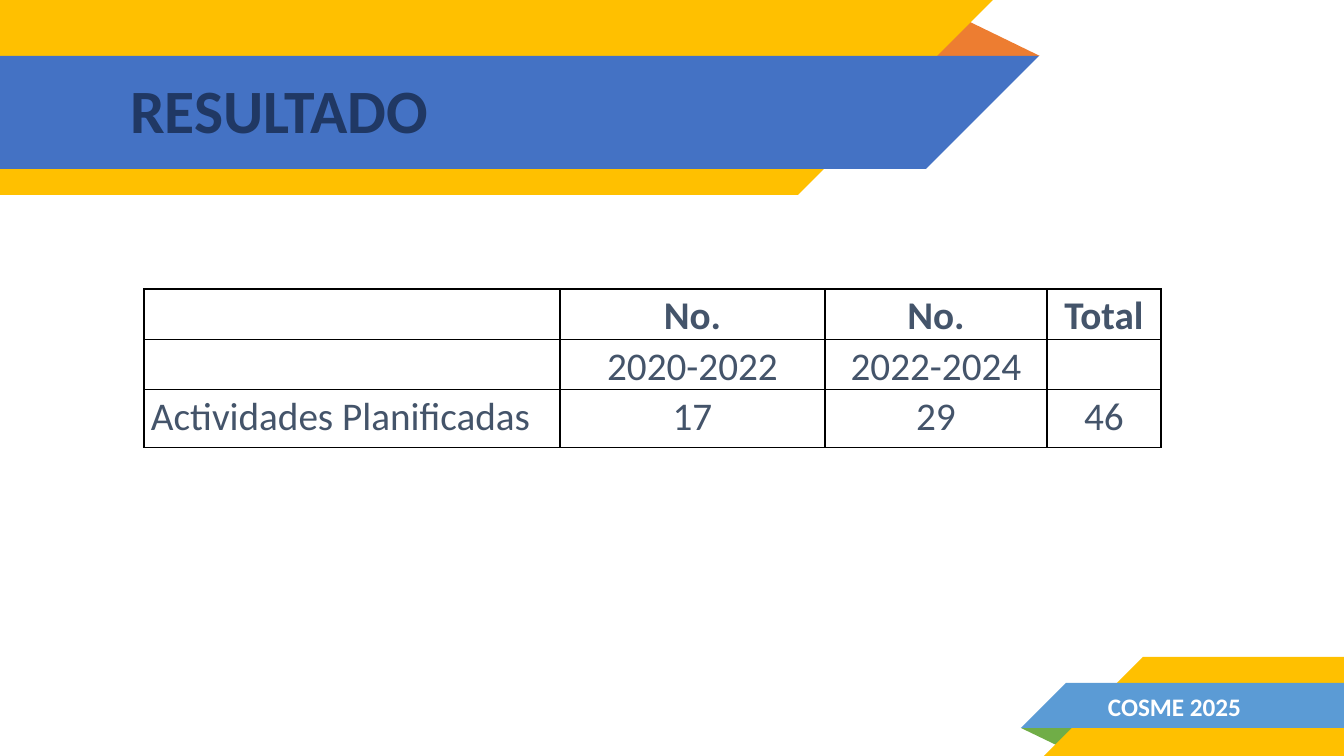
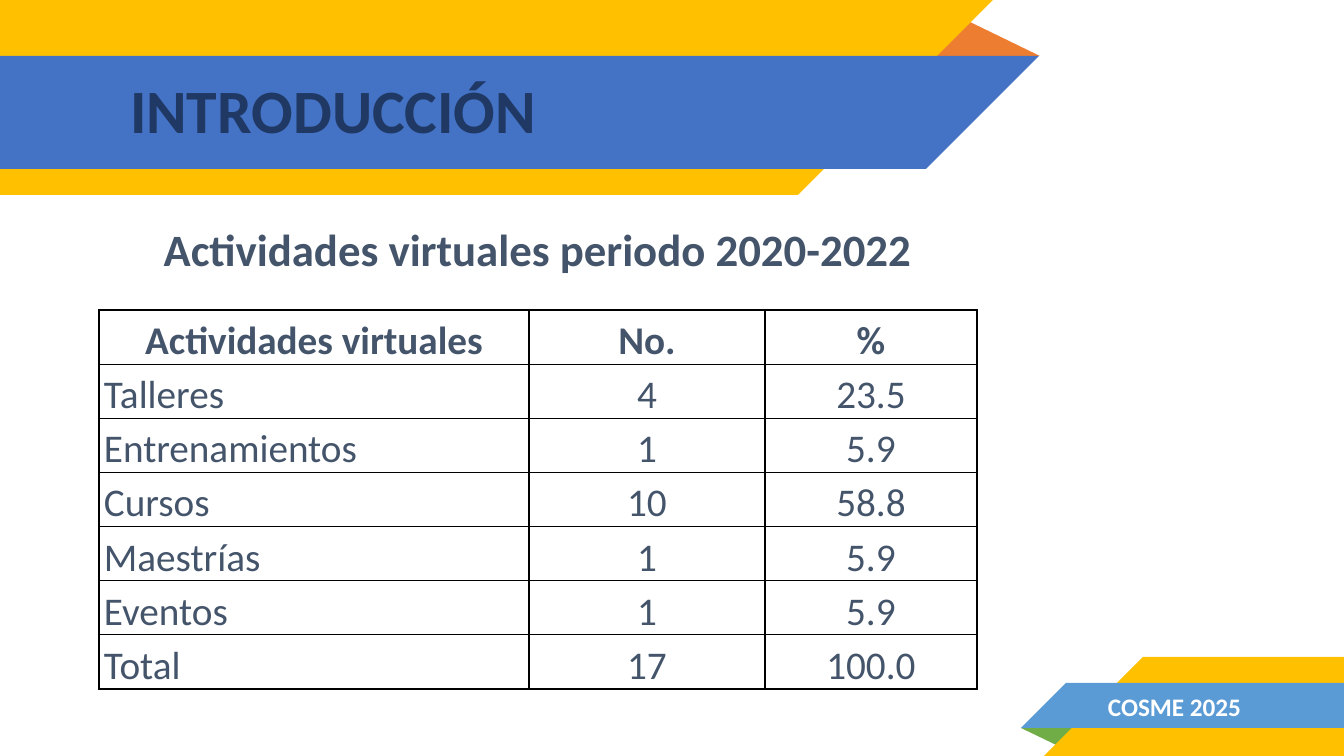
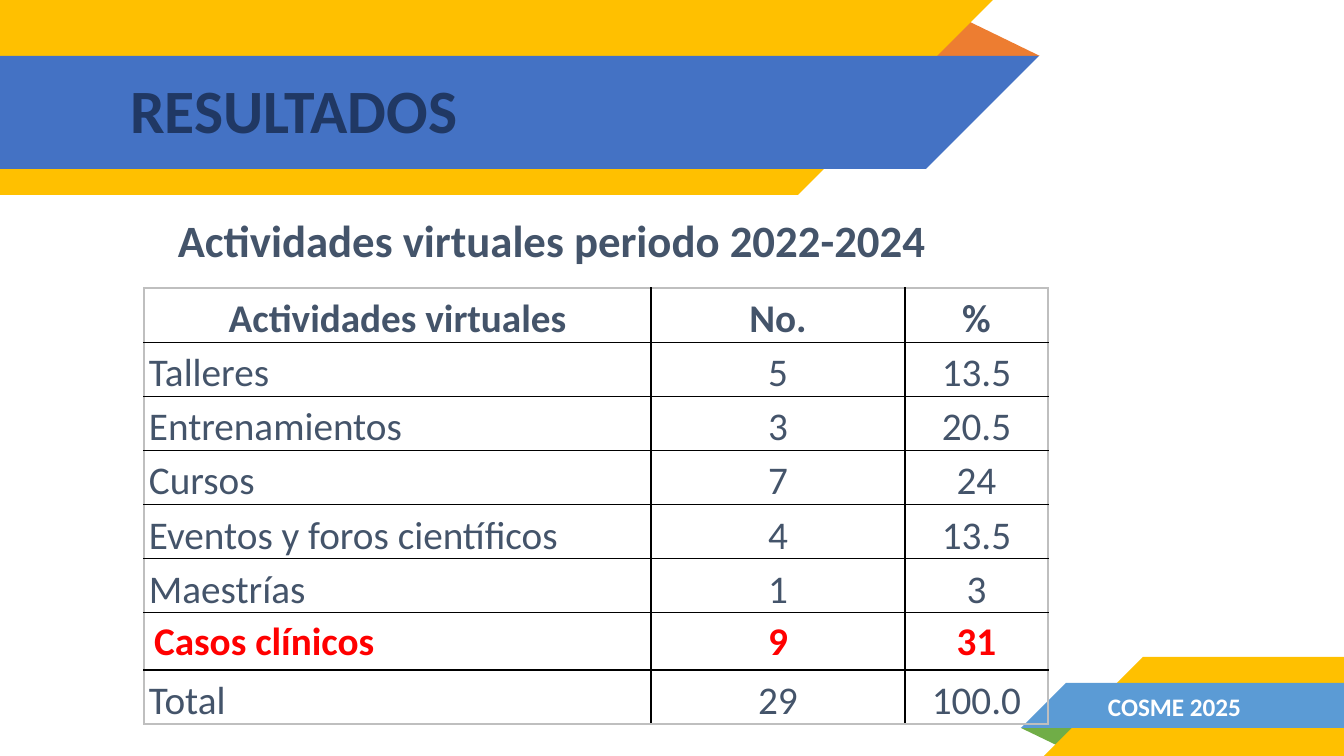
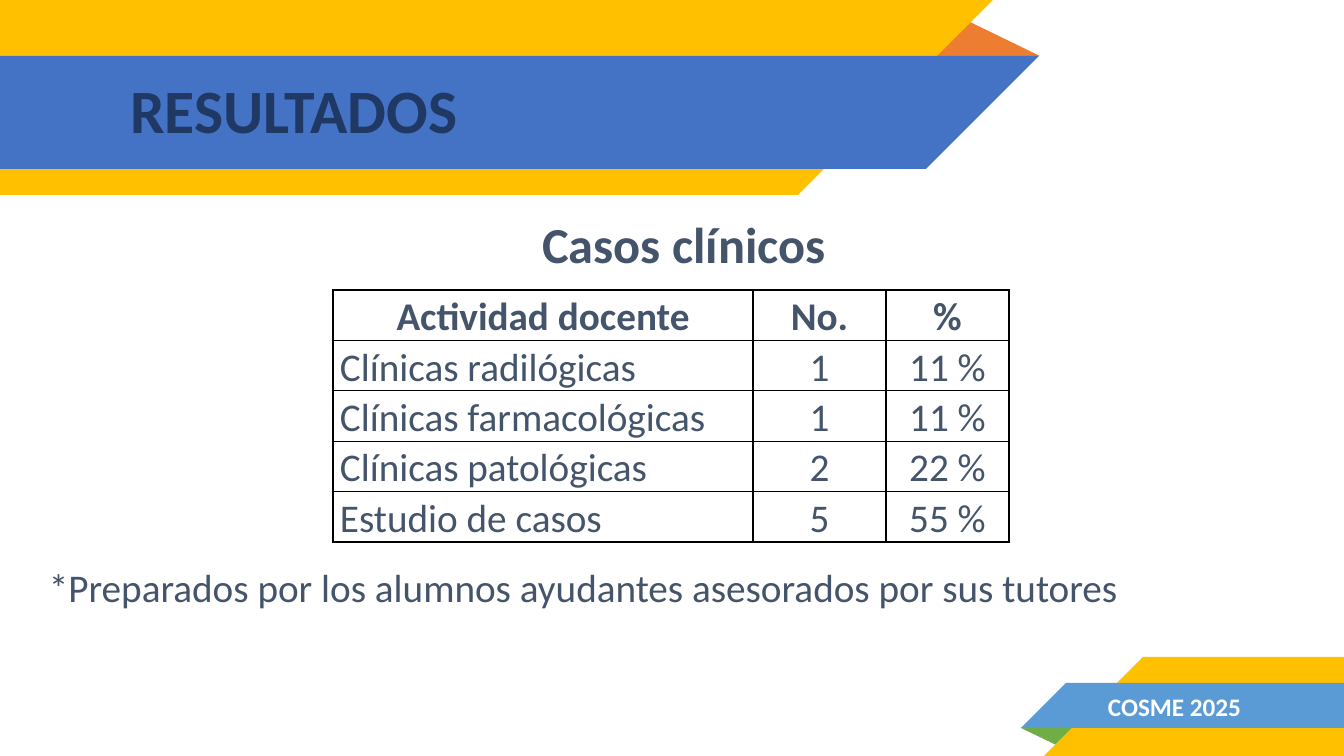
from lxml.etree import SubElement
from pptx import Presentation
from pptx.dml.color import RGBColor
from pptx.enum.shapes import MSO_SHAPE
from pptx.enum.text import MSO_ANCHOR, PP_ALIGN
from pptx.oxml.ns import qn
from pptx.util import Pt

PX = 914400 / 100.8
FONT = "Calibri"
COLORS = {
    "yellow": "FFC000", "blue": "4472C4", "sky": "5B9BD5", "orange": "ED7D31",
    "green": "70AD47", "title": "203864", "text": "44546A", "white": "FFFFFF",
    "highlight": "FF0000", "border": "000000", "faint": "BFBFBF",
}
LEFT, CENTER = PP_ALIGN.LEFT, PP_ALIGN.CENTER

# kind, left, top, width, height, rotation, colour; from back to front
BANDS = [
    (MSO_SHAPE.ISOSCELES_TRIANGLE, 925, 18, 115, 38, 0, "orange"),
    (MSO_SHAPE.RECTANGLE, 0, 0, 798, 195, 0, "yellow"),
    (MSO_SHAPE.RIGHT_TRIANGLE, 798, 0, 195, 195, 90, "yellow"),
    (MSO_SHAPE.RECTANGLE, 0, 56, 926, 113, 0, "blue"),
    (MSO_SHAPE.RIGHT_TRIANGLE, 926, 56, 113, 113, 90, "blue"),
    (MSO_SHAPE.ISOSCELES_TRIANGLE, 1021, 728, 58, 19, 180, "green"),
    (MSO_SHAPE.RECTANGLE, 1143, 657, 201, 99, 0, "yellow"),
    (MSO_SHAPE.RIGHT_TRIANGLE, 1044, 657, 99, 99, 270, "yellow"),
    (MSO_SHAPE.RECTANGLE, 1066, 683, 278, 45, 0, "sky"),
    (MSO_SHAPE.RIGHT_TRIANGLE, 1021, 683, 45, 45, 270, "sky"),
]

# Captions: text, box, size, bold, alignment
SLIDES = [
    {
        "title": "RESULTADO",
        "captions": [],
        "origin": (144, 289), "columns": [416, 265, 222, 114], "heights": [50, 50, 58],
        "inset": 7, "line_spacing": 1.07, "outline": "border",
        "rows": [
            ["", "No.", "No.", "Total"],
            ["", "2020-2022", "2022-2024", ""],
            ["Actividades Planificadas", "17", "29", "46"],
        ],
    },
    {
        "title": "INTRODUCCIÓN",
        "captions": [("Actividades virtuales periodo 2020-2022",
                      (120, 217, 836, 65), 32, True, CENTER)],
        "origin": (99, 310), "columns": [430, 236, 212], "heights": [54] * 7,
        "inset": 5, "line_spacing": 1.15, "outline": "border",
        "rows": [
            ["Actividades virtuales", "No.", "%"],
            ["Talleres", "4", "23.5"],
            ["Entrenamientos", "1", "5.9"],
            ["Cursos", "10", "58.8"],
            ["Maestrías", "1", "5.9"],
            ["Eventos", "1", "5.9"],
            ["Total", "17", "100.0"],
        ],
    },
    {
        "title": "RESULTADOS",
        "captions": [("Actividades virtuales periodo 2022-2024",
                      (168, 208, 848, 65), 32, True, LEFT)],
        "origin": (144, 288), "columns": [507, 254, 143], "heights": [54] * 6 + [57, 54],
        "inset": 5, "line_spacing": 1.15, "outline": "faint", "highlight": 6,
        "rows": [
            ["Actividades virtuales", "No.", "%"],
            ["Talleres", "5", "13.5"],
            ["Entrenamientos", "3", "20.5"],
            ["Cursos", "7", "24"],
            ["Eventos y foros científicos", "4", "13.5"],
            ["Maestrías", "1", "3"],
            ["Casos clínicos", "9", "31"],
            ["Total", "29", "100.0"],
        ],
    },
    {
        "title": "RESULTADOS",
        "captions": [
            ("Casos clínicos", (237, 208, 894, 72), 36, True, CENTER),
            ("*Preparados por los alumnos ayudantes asesorados por sus tutores",
             (39, 558, 1111, 57), 28, False, LEFT),
        ],
        "origin": (333, 290), "columns": [420, 133, 123], "heights": [50] * 5,
        "inset": 7, "line_spacing": 1.07, "outline": "border",
        "rows": [
            ["Actividad docente", "No.", "%"],
            ["Clínicas radilógicas", "1", "11 %"],
            ["Clínicas farmacológicas", "1", "11 %"],
            ["Clínicas patológicas", "2", "22 %"],
            ["Estudio de casos", "5", "55 %"],
        ],
    },
]


def px(*lengths):
    """Turn px lengths into EMU."""
    return [round(length * PX) for length in lengths]


def write(text_frame, text, size, color, bold, alignment):
    text_frame.text = text
    paragraph = text_frame.paragraphs[0]
    paragraph.alignment = alignment
    for run in paragraph.runs:
        run.font.name = FONT
        run.font.size = Pt(size)
        run.font.bold = bold
        run.font.color.rgb = RGBColor.from_string(COLORS[color])
    return paragraph


prs = Presentation()
prs.slide_width, prs.slide_height = px(1344, 756)
layout = prs.slide_layouts[5]
slides = [prs.slides.add_slide(layout) for _ in SLIDES]

# Layouts cannot add shapes, so the bands are made on a slide and moved
for order, (kind, left, top, width, height, rotation, color) in enumerate(BANDS):
    band = slides[0].shapes.add_shape(kind, *px(left, top, width, height))
    band.rotation = rotation
    band.shadow.inherit = False
    band.fill.solid()
    band.fill.fore_color.rgb = RGBColor.from_string(COLORS[color])
    band.line.fill.background()
    if kind == MSO_SHAPE.ISOSCELES_TRIANGLE:
        band.adjustments[0] = 0.32
    band.element.nvSpPr.cNvPr.set("id", str(100 + order))
    layout.element.cSld.spTree.insert(2 + order, band.element)

heading = layout.placeholders[0]
heading.left, heading.top, heading.width, heading.height = px(120, 57, 773, 113)
heading.text_frame.vertical_anchor = MSO_ANCHOR.MIDDLE

for slide, content in zip(slides, SLIDES):
    title = write(slide.shapes.title.text_frame, content["title"], 44, "title", True, LEFT)
    title.line_spacing = 0.9

    footer = slide.shapes.add_textbox(*px(1098, 686, 219, 40))
    footer.text_frame.word_wrap = True
    write(footer.text_frame, "COSME 2025", 18, "white", True, LEFT)

    for text, box, size, bold, alignment in content["captions"]:
        caption = slide.shapes.add_textbox(*px(*box))
        caption.text_frame.word_wrap = True
        write(caption.text_frame, text, size, "text", bold, alignment)

    rows, columns, heights = content["rows"], content["columns"], content["heights"]
    table = slide.shapes.add_table(
        len(rows), len(columns), *px(*content["origin"], sum(columns), sum(heights))
    ).table
    table.first_row = table.horz_banding = False
    for column, width in zip(table.columns, px(*columns)):
        column.width = width
    for row, height in zip(table.rows, px(*heights)):
        row.height = height

    for r, values in enumerate(rows):
        highlighted = r == content.get("highlight")
        for c, value in enumerate(values):
            cell = table.cell(r, c)
            paragraph = write(
                cell.text_frame, value, 28, "highlight" if highlighted else "text",
                r == 0 or highlighted, CENTER if c or r == 0 else LEFT,
            )
            if not highlighted:
                cell.margin_left, cell.margin_right = px(content["inset"], content["inset"])
                cell.margin_top = cell.margin_bottom = 0
                paragraph.line_spacing = content["line_spacing"]

            outer = {
                "a:lnL": c == 0, "a:lnR": c == len(columns) - 1,
                "a:lnT": r == 0, "a:lnB": r == len(rows) - 1,
            }
            for edge, is_outer in outer.items():
                color = content["outline"] if is_outer else "border"
                line = SubElement(cell._tc.get_or_add_tcPr(), qn(edge), w=str(Pt(1)))
                fill = SubElement(line, qn("a:solidFill"))
                SubElement(fill, qn("a:srgbClr"), val=COLORS[color])
            cell.fill.background()

prs.save("out.pptx")
